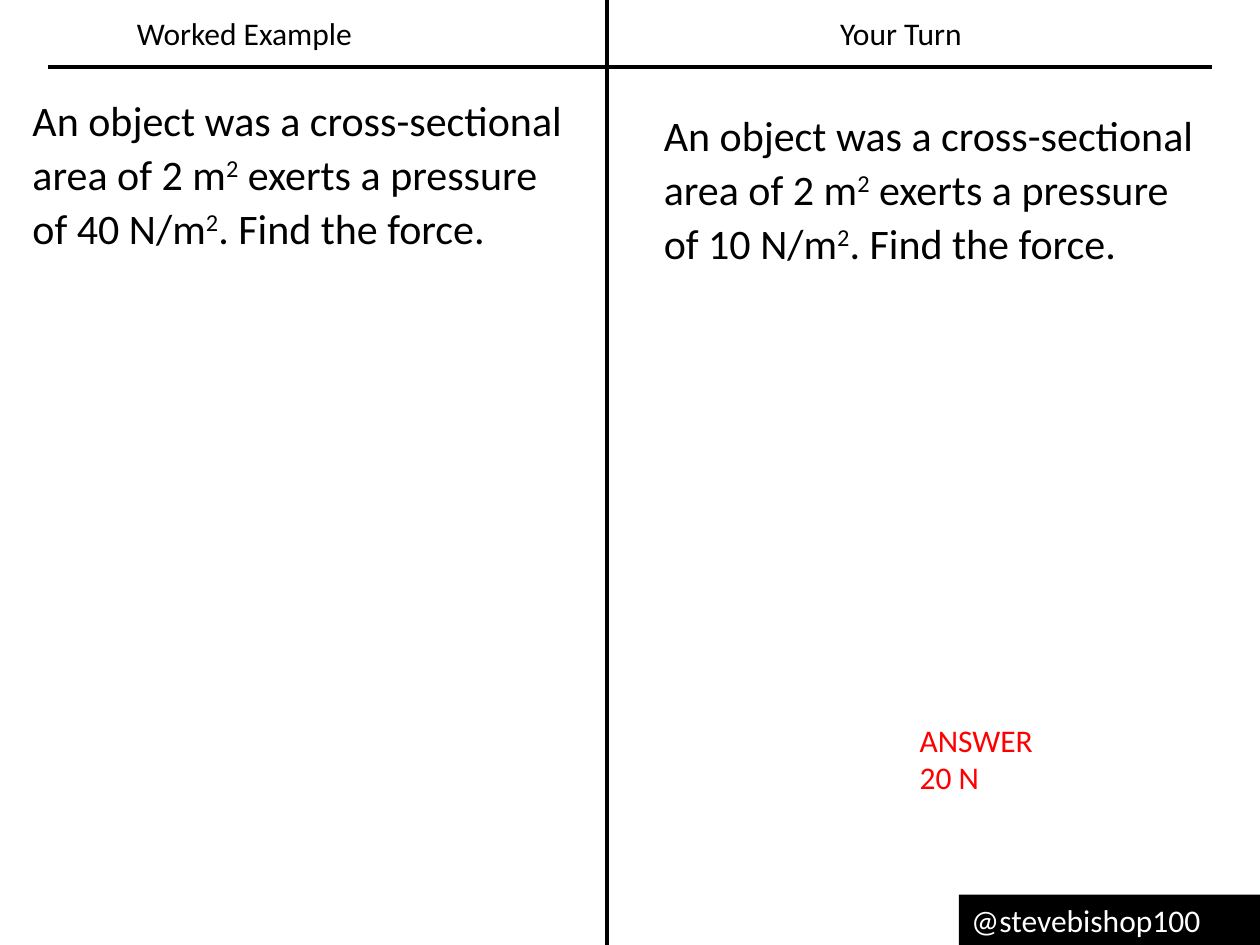
from pptx import Presentation
from pptx.dml.color import RGBColor
from pptx.enum.shapes import MSO_CONNECTOR, MSO_SHAPE
from pptx.enum.text import PP_ALIGN
from pptx.util import Inches, Pt
from lxml.etree import SubElement
from pptx.oxml.ns import qn

BLACK = RGBColor(0, 0, 0)
WHITE = RGBColor(255, 255, 255)
RED = RGBColor(255, 0, 0)
WIDE, HIGH = 10, 7.5
SPLIT, RULE, EDGE = 4.82, 0.53, 0.38

HEADS = [
    ("Worked Example", (0.67, 0.06, 2.54, 0.4)),
    ("Your Turn", (6.26, 0.06, 1.78, 0.4)),
]
TASKS = [("40", (0.16, 0.67, 4.44, 1.39)), ("10", (5.17, 0.79, 4.44, 1.39))]
ANSWER = ["ANSWER", "20 N"]
HANDLE = "@stevebishop100"
LINES = [(SPLIT, 0, SPLIT, HIGH), (EDGE, RULE, WIDE - EDGE, RULE)]


def write(para, text, size=18, color=BLACK, raised=False):
    run = para.add_run()
    run.text = text
    font = run.font
    font.name, font.size = "Calibri", Pt(size)
    font.color.rgb = color
    if raised:
        font._element.set("baseline", "30000")


def add_box(slide, place):
    frame = slide.shapes.add_textbox(*map(Inches, place)).text_frame
    frame.word_wrap = True
    return frame


def add_line(slide, ends):
    line = slide.shapes.add_connector(MSO_CONNECTOR.STRAIGHT, *map(Inches, ends))
    line.line.color.rgb = BLACK
    line.line.width = Pt(2.5)
    SubElement(line._element.spPr, qn("a:effectLst"))


def add_task(slide, force, place):
    para = add_box(slide, place).paragraphs[0]
    para.line_spacing = 1.07
    para.space_after = Pt(8)
    parts = ["An object was a cross-sectional area of 2 m", "2",
             f" exerts a pressure of {force} N/m", "2", ". Find the force."]
    for i, part in enumerate(parts):
        write(para, part, 24, raised=i % 2 == 1)


def main():
    deck = Presentation()
    deck.slide_width, deck.slide_height = Inches(WIDE), Inches(HIGH)
    slide = deck.slides.add_slide(deck.slide_layouts[6])

    for text, place in HEADS:
        para = add_box(slide, place).paragraphs[0]
        para.alignment = PP_ALIGN.CENTER
        write(para, text)
    for ends in LINES:
        add_line(slide, ends)
    for force, place in TASKS:
        add_task(slide, force, place)

    frame = add_box(slide, (7.2, 5.67, 2.52, 1.01))
    for i, text in enumerate(ANSWER):
        para = frame.add_paragraph() if i else frame.paragraphs[0]
        write(para, text, color=RED)

    wide, high = 2.39, 0.4
    place = (WIDE - wide, HIGH - high, wide, high)
    tag = slide.shapes.add_shape(MSO_SHAPE.RECTANGLE, *map(Inches, place))
    tag.shadow.inherit = False
    tag.fill.solid()
    tag.fill.fore_color.rgb = BLACK
    tag.line.fill.background()
    para = tag.text_frame.paragraphs[0]
    para.alignment = PP_ALIGN.LEFT
    write(para, HANDLE, color=WHITE)

    deck.save("out.pptx")


if __name__ == "__main__":
    main()
